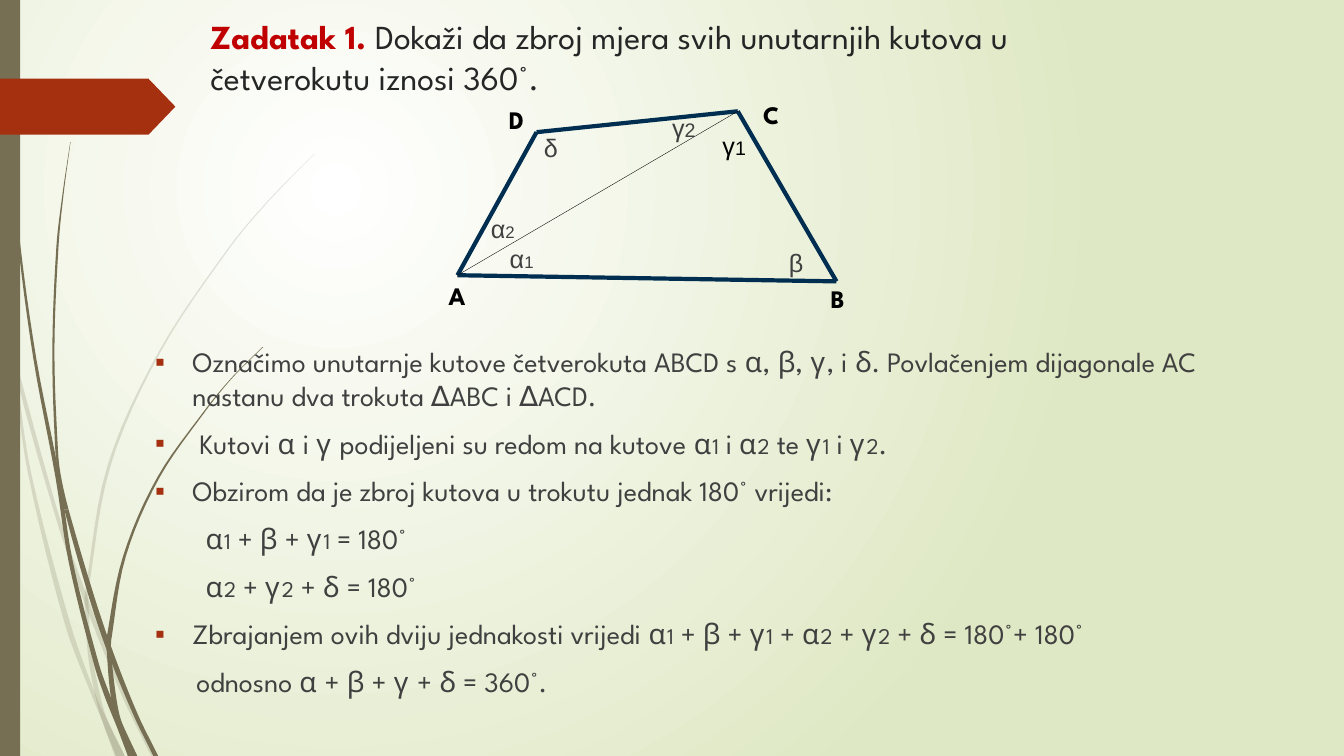
from lxml import etree
from pptx import Presentation, util as u
from pptx.dml.color import RGBColor
from pptx.enum import lang, shapes, text
from pptx.oxml import parse_xml
from pptx.oxml.ns import qn

A_NS = "http://schemas.openxmlformats.org/drawingml/2006/main"
P_NS = "http://schemas.openxmlformats.org/presentationml/2006/main"
COLORS = {"wisp": "766F54", "accent": "A53010", "red": "C00000", "title": "262626",
          "body": "404040", "black": "000000", "side": "002E50",
          "bg_center": "FFFFFF", "bg_edge": "DFE8C4"}
FONT, GREEK = "League Spartan", "Arial"

# Wisp strands: heights where a strand is cut, then slices (y, left x, right x)
PALE_WISPS = [
    ((252, 514), [(203, 0, 0.2), (215, 0, 3.6), (232, 3.6, 6.5), (252, 7.9, 9.7),
     (271, 10.4, 12.2), (338, 20, 22.3), (446, 46.4, 50.4), (498, 66, 69),
     (514, 72.7, 76.5), (540, 82, 89.3)]),
    ((431, 439), [(248, 10, 10.2), (271, 12.2, 15), (375, 41.4, 44.2), (431, 60.5, 64),
     (439, 63.4, 67), (499, 88, 91.6), (540, 108, 111.6)]),
    ((431, 514), [(110, 224.4, 224.8), (142, 192.7, 193.5), (176, 164, 165),
     (250.5, 113.8, 115.2), (332, 77, 79.2), (420.5, 61.2, 63.4), (431, 60.5, 63.2),
     (465, 62.6, 65.5), (492, 67, 70.5), (514, 72.7, 76.6), (540, 83, 89)]),
]
DARK_WISPS = [
    ((343, 518), [(0, 2.2, 2.9), (35, 2.9, 3.6), (79, 5, 5.8), (168, 12.2, 13.7),
     (256, 23.8, 25.9), (343, 40, 43), (401, 49, 52), (474, 67, 70.6), (498, 75, 79.2),
     (518, 83, 87.8), (540, 91.4, 98)]),
    ((340, 364, 465), [(101.5, 50.2, 50.4), (139, 44.6, 45.4), (176, 40.3, 41.8),
     (251, 37.4, 38.9), (323, 39.6, 41.5), (340, 42, 43.5), (364, 46, 49),
     (426, 63.4, 67.3), (465, 76.5, 80.5), (510, 95, 98.3), (540, 109.5, 113)]),
    ((455, 465, 517), [(248, 187.3, 187.9), (269, 166.2, 166.8), (292, 147, 148),
     (341, 112.3, 114), (397, 88, 90), (455, 76.3, 79.8), (465, 76.3, 79.4),
     (498, 79.2, 83), (517, 84, 87.3), (540, 91.4, 98)]),
]

# Proof steps: (bulleted, left margin, text); pieces between bars are small indices
PROOF = [
    (True, 26.5, "Označimo unutarnje kutove četverokuta ABCD s α, β, γ, i δ. "
                 "Povlačenjem dijagonale AC nastanu dva trokuta ∆ABC i ∆ACD."),
    (True, 26.5, " Kutovi α i γ podijeljeni su redom na kutove α|1| i α|2| te γ|1| i γ|2|."),
    (True, 26.5, "Obzirom da je zbroj kutova u trokutu jednak 180° vrijedi:"),
    (False, 36, "α|1| + β + γ|1| = 180°"),
    (False, 36, "α|2| + γ|2| + δ = 180°"),
    (True, 26.5, "Zbrajanjem ovih dviju jednakosti vrijedi "
                 "α|1| + β + γ|1| + α|2| + γ|2| + δ = 180°+ 180°"),
    (False, 29.3, "odnosno α + β + γ + δ = 360°."),
]

# Quadrilateral
VERTICES = {"A": (326.8, 196.6), "B": (597.5, 201), "C": (527, 79.5), "D": (383.3, 94.4)}
EDGES = [("DC", "side", 3), ("AB", "side", 3), ("AD", "side", 3), ("CB", "side", 3),
         ("AC", "black", 0.25)]
VERTEX_LABELS = [("A", 313.3, 196.5, 27), ("B", 586.2, 198.5, 27),
                 ("C", 538, 67.2, 27), ("D", 356.5, 71, 28)]
# Angle labels: text, left, top, width, index size, colour
ANGLE_LABELS = [("α|1", 357, 170, 32, 12, "body"), ("α|2", 343.5, 149, 32, 12, "body"),
                ("γ|1", 509, 89.2, 32, 14, "black"), (" γ|2", 468, 77, 37, 14, "body"),
                ("β", 556.5, 173, 25, 14, "body"), ("δ", 381.5, 91.2, 25, 14, "body")]


def smooth_slices(slices, steps=6):
    """Hermite interpolation of both edges as functions of y."""
    last = len(slices) - 1

    def slope(i, k):
        lo, hi = slices[max(i - 1, 0)], slices[min(i + 1, last)]
        return (hi[k] - lo[k]) / (hi[0] - lo[0])

    result = []
    for i, (a, b) in enumerate(zip(slices, slices[1:])):
        h = b[0] - a[0]
        for n in range(steps):
            t = n / steps
            edges = [(2*t**3 - 3*t**2 + 1) * a[k] + (t**3 - 2*t**2 + t) * h * slope(i, k)
                     + (3*t**2 - 2*t**3) * b[k] + (t**3 - t**2) * h * slope(i + 1, k)
                     for k in (1, 2)]
            result.append((a[0] + t * h, *edges))
    return result + [slices[-1]]


class SlideBuilder:
    def __init__(self, prs):
        self.s = prs.slides.add_slide(prs.slide_layouts[1])

    def color(self, name):
        return RGBColor.from_string(COLORS[name])

    def background(self):
        stops = "".join(f'<a:gs pos="{pos}"><a:srgbClr val="{COLORS[name]}"/></a:gs>'
                        for pos, name in ((0, "bg_center"), (100000, "bg_edge")))
        self.s.element.cSld.insert(0, parse_xml(
            f'<p:bg xmlns:p="{P_NS}" xmlns:a="{A_NS}"><p:bgPr><a:gradFill><a:gsLst>{stops}'
            '</a:gsLst><a:path path="circle"><a:fillToRect l="50000" t="50000" r="100000" '
            'b="100000"/></a:path></a:gradFill><a:effectLst/></p:bgPr></p:bg>'))

    def paint(self, sp, color):
        sp.shadow.inherit = False
        sp.fill.solid()
        sp.fill.fore_color.rgb = self.color(color)
        sp.line.fill.background()
        return sp

    def shape(self, kind, x, y, w, h, color):
        sp = self.s.shapes.add_shape(kind, u.Pt(x), u.Pt(y), u.Pt(w), u.Pt(h))
        return self.paint(sp, color)

    def wisp(self, cuts, slices, alpha=None):
        rows = smooth_slices(slices)
        bounds = [slices[0][0], *cuts, slices[-1][0]]
        for top, bottom in zip(bounds, bounds[1:]):
            part = [row for row in rows if top <= row[0] <= bottom]
            outline = [(l, y) for y, l, r in part] + [(r, y) for y, l, r in reversed(part)]
            pts = [(u.Pt(x), u.Pt(y)) for x, y in outline]
            fb = self.s.shapes.build_freeform(*pts[0], scale=1)
            fb.add_line_segments(pts[1:], close=True)
            sp = self.paint(fb.convert_to_shape(), "wisp")
            if alpha:
                clr = sp.element.spPr.find(qn("a:solidFill"))[0]
                etree.SubElement(clr, qn("a:alpha")).set("val", str(alpha * 1000))

    def line(self, start, end, color, width):
        c = self.s.shapes.add_connector(shapes.MSO_CONNECTOR.STRAIGHT,
                                        *(u.Pt(v) for v in (*start, *end)))
        c.line.color.rgb = self.color(color)
        c.line.width = u.Pt(width)
        etree.SubElement(c.element.spPr, qn("a:effectLst"))

    def run(self, p, content, size, color, font=FONT, bold=False):
        r = p.add_run()
        r.text = content
        r.font.name, r.font.size, r.font.bold = font, u.Pt(size), bold
        r.font.language_id = lang.MSO_LANGUAGE_ID.CROATIAN
        r.font.color.rgb = self.color(color)

    def indexed(self, p, content, size, small, color, font=FONT):
        for i, part in enumerate(content.split("|")):
            self.run(p, part, small if i % 2 else size, color, font)

    def placeholder(self, index, x, y, w, h):
        sp = self.s.placeholders[index]
        sp.element.getparent().append(sp.element)  # in front of the wisps
        sp.left, sp.top, sp.width, sp.height = (u.Pt(v) for v in (x, y, w, h))
        tf = sp.text_frame
        tf.word_wrap, tf.auto_size = True, text.MSO_AUTO_SIZE.NONE
        tf.vertical_anchor = text.MSO_ANCHOR.TOP
        return tf

    def title(self, parts):
        p = self.placeholder(0, 143, 8, 702, 101).paragraphs[0]
        p.alignment = text.PP_ALIGN.LEFT
        for content, color, bold in parts:
            self.run(p, content, 24, color, bold=bold)

    def proof(self, items):
        tf = self.placeholder(1, 103.7, 242.8, 813.6, 297)
        for i, (bulleted, margin, content) in enumerate(items):
            p = tf.add_paragraph() if i else tf.paragraphs[0]
            p.space_before = u.Pt(10 if i else 0)
            pPr = p._p.get_or_add_pPr()
            pPr.set("marL", str(u.Pt(margin)))
            pPr.set("indent", str(-u.Pt(margin) if bulleted else 0))
            if bulleted:
                clr = etree.SubElement(pPr, qn("a:buClr"))
                etree.SubElement(clr, qn("a:srgbClr")).set("val", COLORS["accent"])
                etree.SubElement(pPr, qn("a:buChar")).set("char", "▪")
            else:
                etree.SubElement(pPr, qn("a:buNone"))
            self.indexed(p, content, 20, 16, "body")

    def label(self, x, y, w):
        tf = self.s.shapes.add_textbox(u.Pt(x), u.Pt(y), u.Pt(w), u.Pt(29)).text_frame
        tf.word_wrap = False
        return tf.paragraphs[0]


def main():
    prs = Presentation()
    prs.slide_width, prs.slide_height = u.Pt(960), u.Pt(540)
    b = SlideBuilder(prs)

    # Background and decoration
    b.background()
    for cuts, slices in PALE_WISPS:
        b.wisp(cuts, slices, alpha=20)
    for cuts, slices in DARK_WISPS:
        b.wisp(cuts, slices)
    b.shape(shapes.MSO_SHAPE.RECTANGLE, 0, 0, 14.4, 540, "wisp")
    tag = b.shape(shapes.MSO_SHAPE.PENTAGON, 0, 56.2, 125.3, 40, "accent")
    tag.adjustments[0] = 0.48

    # Task and proof
    b.title([("Zadatak 1. ", "red", True),
             ("Dokaži da zbroj mjera svih unutarnjih kutova u četverokutu iznosi 360°.",
              "title", False)])
    b.proof(PROOF)

    # Quadrilateral with its diagonal and labels
    for (start, end), color, width in EDGES:
        b.line(VERTICES[start], VERTICES[end], color, width)
    for name, x, y, w in VERTEX_LABELS:
        b.run(b.label(x, y, w), name, 18, "black", bold=True)
    for content, x, y, w, small, color in ANGLE_LABELS:
        b.indexed(b.label(x, y, w), content, 18, small, color, GREEK)

    prs.save("out.pptx")


if __name__ == "__main__":
    main()
